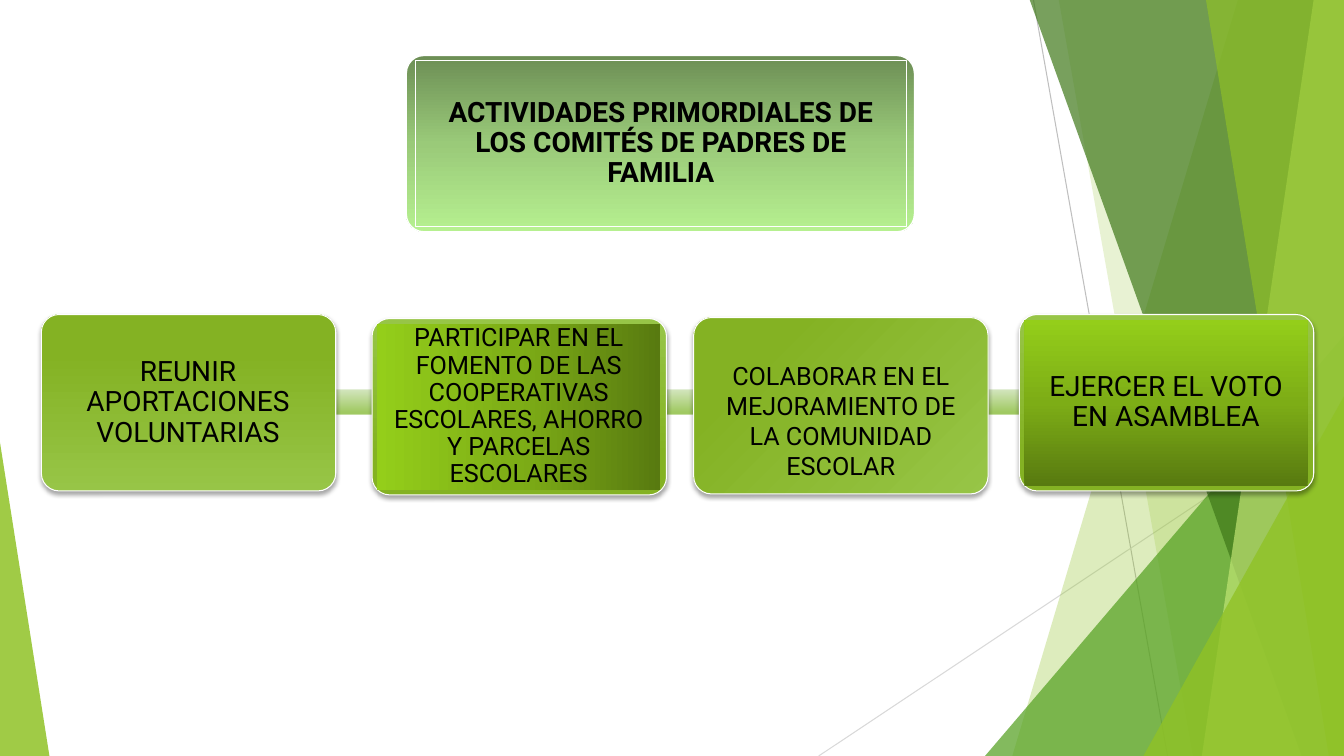
"""Build a slide on the main activities of parent committees."""
import lxml.etree
import pptx
import pptx.dml.color
import pptx.enum.shapes
import pptx.enum.text
import pptx.oxml.ns
import pptx.util

Inches = pptx.util.Inches
Pt = pptx.util.Pt
RGB = pptx.dml.color.RGBColor.from_string
qn = pptx.oxml.ns.qn
Shape = pptx.enum.shapes.MSO_SHAPE

THEME = {
    "font": "Roboto", "large": 20, "small": 18, "text": "000000",
    "white": "FFFFFF", "lime": "90C226", "leaf": "54A021",
    "forest": "3F7819", "pale": "C0E474", "rays": ("BFBFBF", "D9D9D9"),
    "heading": ((0, "6C8E55"), (50, "9ACA79"), (100, "B6F090")),
    "bar": ((0, "D3E5BE"), (88, "A0C962")),
    "card": ((0, "97C547"), (78, "84B223")),
    "panel": ((0, "587A10"), (50, "7DAD16"), (100, "94CE1A")),
}


def paint(shape, stops, angle, outline=None, width=0.75):
    shape.shadow.inherit = False
    shape.fill.gradient()
    shape.fill.gradient_angle = 360 - angle
    stop_list = shape._element.spPr.find(qn("a:gradFill")).find(qn("a:gsLst"))
    for old_stop in list(stop_list):
        stop_list.remove(old_stop)
    for position, color in stops:
        stop = lxml.etree.SubElement(stop_list, qn("a:gs"), pos=str(position * 1000))
        lxml.etree.SubElement(stop, qn("a:srgbClr"), val=color)
    if outline:
        shape.line.color.rgb = RGB(outline)
        shape.line.width = Pt(width)
    else:
        shape.line.fill.background()


def write(shape, wording, size, spacing=0.9, margin=0.08, bold=False):
    frame = shape.text_frame
    frame.text = wording
    frame.word_wrap = True
    frame.auto_size = pptx.enum.text.MSO_AUTO_SIZE.NONE
    frame.vertical_anchor = pptx.enum.text.MSO_ANCHOR.MIDDLE
    frame.margin_left = frame.margin_right = Inches(margin)
    frame.margin_top = frame.margin_bottom = Inches(margin)
    paragraph = frame.paragraphs[0]
    paragraph.alignment = pptx.enum.text.PP_ALIGN.CENTER
    paragraph.line_spacing = spacing
    paragraph.font.name = THEME["font"]
    paragraph.font.size = Pt(size)
    paragraph.font.bold = bold
    paragraph.font.color.rgb = RGB(THEME["text"])


deck = pptx.Presentation()
deck.slide_width, deck.slide_height = Inches(13.33), Inches(7.5)
slide = deck.slides.add_slide(deck.slide_layouts[5])
shapes = slide.shapes

rays = [(10.25, 0, 11.58, 7.5), (13.33, 4.03, 8.12, 7.5)]
for ends, color in zip(rays, THEME["rays"]):
    ray = shapes.add_connector(
        pptx.enum.shapes.MSO_CONNECTOR.STRAIGHT, *[Inches(n) for n in ends])
    ray.line.color.rgb = RGB(color)
    ray.line.width = Pt(0.75)
    lxml.etree.SubElement(ray._element.spPr, qn("a:effectLst"))

facets = [
    ("band", (12.28, 10.04), "lime", 30),
    ("band", (10.5, 11.83), "lime", 20),
    ("triangle", (9.77, 3.33, 3.56, 4.17, 1), "leaf", 72),
    ("band", (10.21, 12.91), "forest", 70),
    ("band", (13.03, 11.92), "pale", 70),
    ("band", (11.96, 13.18), "lime", 65),
    ("triangle", (11.34, 3.93, 1.99, 3.57, 1), "lime", 80),
    ("triangle", (0, 4.39, 0.49, 3.11, 0), "lime", 85),
]
for kind, geometry, color, opacity in facets:
    if kind == "band":
        top_x, bottom_x = geometry
        outline = shapes.build_freeform(Inches(top_x), Inches(-0.01))
        corners = [(13.33, -0.01), (13.33, 7.5), (bottom_x, 7.5)]
        outline.add_line_segments([(Inches(x), Inches(y)) for x, y in corners])
        facet = outline.convert_to_shape()
    else:
        facet = shapes.add_shape(
            Shape.ISOSCELES_TRIANGLE, *[Inches(n) for n in geometry[:4]])
        facet.adjustments[0] = geometry[4]
    facet.shadow.inherit = False
    facet.fill.solid()
    facet.fill.fore_color.rgb = RGB(THEME[color])
    facet.line.fill.background()
    tint = facet._element.spPr.find(qn("a:solidFill"))[0]
    lxml.etree.SubElement(tint, qn("a:alpha"), val=str(opacity * 1000))

heading_card = shapes.add_shape(
    Shape.ROUNDED_RECTANGLE, Inches(4.03), Inches(0.55), Inches(5.04), Inches(1.75))
heading_card.adjustments[0] = 0.1
paint(heading_card, THEME["heading"], 90, THEME["white"], 1)

heading = shapes.title
heading.left, heading.top = Inches(4.12), Inches(0.6)
heading.width, heading.height = Inches(4.87), Inches(1.65)
heading.line.color.rgb = RGB(THEME["white"])
heading.line.width = Pt(0.75)
write(heading, "ACTIVIDADES PRIMORDIALES DE LOS COMITÉS DE PADRES DE FAMILIA",
      THEME["large"], bold=True)
shapes._spTree.append(heading._element)

for left, width in [(1.34, 3.87), (8.73, 2.18), (5.79, 2.18)]:
    bar = shapes.add_shape(
        Shape.RECTANGLE, Inches(left), Inches(3.86), Inches(width), Inches(0.26))
    paint(bar, THEME["bar"], 90, THEME["white"], 1)
    bar_tint = bar.line._ln.find(qn("a:solidFill"))[0]
    lxml.etree.SubElement(bar_tint, qn("a:alpha"), val="60000")

activities = [
    (0.41, 3.12, 270, None, "large", "REUNIR APORTACIONES VOLUNTARIAS"),
    (10.11, 3.12, 90, 270, "large", "EJERCER EL VOTO EN ASAMBLEA"),
    (3.69, 3.16, 90, 180, "small", "PARTICIPAR EN EL FOMENTO DE LAS COOPERATIVAS "
     "ESCOLARES, AHORRO Y PARCELAS ESCOLARES"),
    (6.88, 3.15, 225, None, "small",
     "COLABORAR EN EL MEJORAMIENTO DE LA COMUNIDAD ESCOLAR"),
]
for left, top, card_angle, panel_angle, size, wording in activities:
    card = shapes.add_shape(
        Shape.ROUNDED_RECTANGLE, Inches(left), Inches(top), Inches(2.92), Inches(1.75))
    card.adjustments[0] = 0.1
    paint(card, THEME["card"], card_angle, THEME["white"])
    shadow = lxml.etree.SubElement(
        card._element.spPr.find(qn("a:effectLst")), qn("a:outerShdw"),
        blurRad=str(Pt(3)), dist=str(Pt(2)), dir="5400000", rotWithShape="0")
    shade = lxml.etree.SubElement(shadow, qn("a:srgbClr"), val=THEME["text"])
    lxml.etree.SubElement(shade, qn("a:alpha"), val="35000")
    if card_angle == 225:
        write(card, wording, THEME[size], spacing=1.0, margin=0.05)
        card.text_frame.margin_left = card.text_frame.margin_right = Inches(0.1)
        card.text_frame.margin_top = Inches(0.34)
        continue
    inner = [Inches(n) for n in (left + 0.05, top + 0.05, 2.81, 1.65)]
    if panel_angle is None:
        panel = shapes.add_textbox(*inner)
    else:
        panel = shapes.add_shape(Shape.RECTANGLE, *inner)
        paint(panel, THEME["panel"], panel_angle)
    write(panel, wording, THEME[size])

deck.save("out.pptx")
